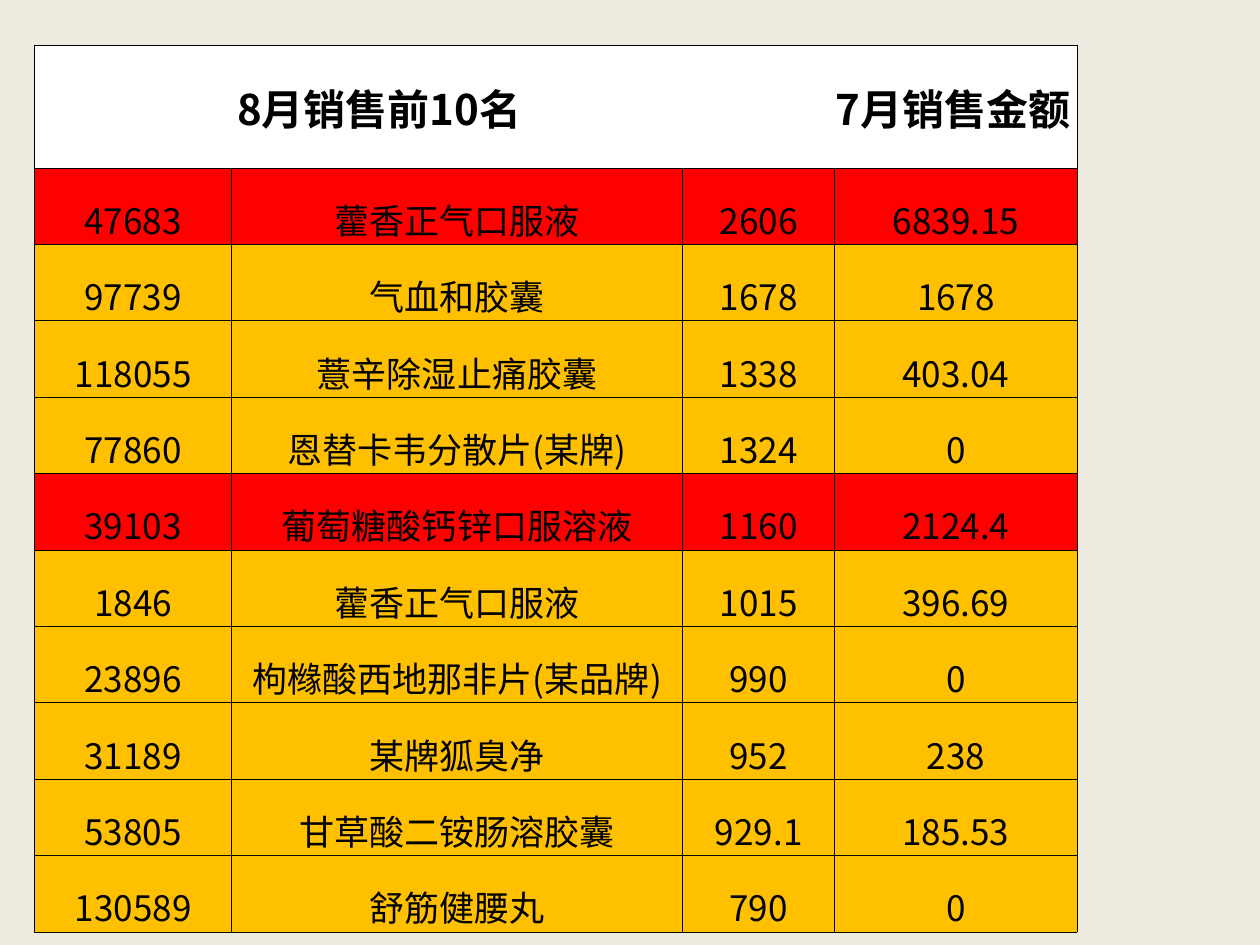
from lxml import etree
from pptx import Presentation
from pptx import util as u
from pptx.dml.color import RGBColor
from pptx.enum import text
from pptx.oxml.ns import qn

FONT = "Noto Sans CJK SC"
BLACK, WHITE, RED, AMBER = "000000", "FFFFFF", "FF0000", "FFC000"
PLAIN_TABLE_STYLE = "{2D5ABB26-0587-4C30-8999-92F81FD0307C}"

COLUMN_WIDTHS = [3.97, 9.09, 3.07, 4.88]
HEADER_HEIGHT, ROW_HEIGHT = 1.6, 1.54
HEADINGS = ["8月销售前10名", "", "", "7月销售金额"]
SALES = [
    ("47683", "藿香正气口服液", "2606", "6839.15"),
    ("97739", "气血和胶囊", "1678", "1678"),
    ("118055", "薏辛除湿止痛胶囊", "1338", "403.04"),
    ("77860", "恩替卡韦分散片(某牌)", "1324", "0"),
    ("39103", "葡萄糖酸钙锌口服溶液", "1160", "2124.4"),
    ("1846", "藿香正气口服液", "1015", "396.69"),
    ("23896", "枸橼酸西地那非片(某品牌)", "990", "0"),
    ("31189", "某牌狐臭净", "952", "238"),
    ("53805", "甘草酸二铵肠溶胶囊", "929.1", "185.53"),
    ("130589", "舒筋健腰丸", "790", "0"),
]
FALLEN_CODES = {"47683", "39103"}


def rgb(value):
    return RGBColor.from_string(value)


def write(frame, words, size=20, bold=False, color=BLACK, align=None, indent=0):
    paragraph = frame.paragraphs[0]
    if align is not None:
        paragraph.alignment = align
    if indent:
        properties = paragraph._p.get_or_add_pPr()
        properties.set("marL", str(u.Cm(indent)))
        properties.set("indent", "0")
    run = paragraph.add_run()
    run.text = words
    run.font.size = u.Pt(size)
    run.font.bold = bold
    run.font.name = FONT
    run.font.color.rgb = rgb(color)
    east_asian = etree.SubElement(run._r.get_or_add_rPr(), qn("a:ea"))
    east_asian.set("typeface", FONT)


class Deck:
    """Holds the slide style and the slide being built."""

    def __init__(self, width, height, background):
        self.presentation = Presentation()
        self.presentation.slide_width = u.Cm(width)
        self.presentation.slide_height = u.Cm(height)
        self.slide = self.presentation.slides.add_slide(
            self.presentation.slide_layouts[6])
        fill = self.slide.background.fill
        fill.solid()
        fill.fore_color.rgb = rgb(background)

    def table(self, left, top, widths, heights):
        table = self.slide.shapes.add_table(
            len(heights), len(widths), u.Cm(left), u.Cm(top),
            u.Cm(sum(widths)), u.Cm(sum(heights))).table
        table.first_row = table.horz_banding = False
        table._tbl.tblPr.find(qn("a:tableStyleId")).text = PLAIN_TABLE_STYLE
        for column, width in zip(table.columns, widths):
            column.width = u.Cm(width)
        for row, height in zip(table.rows, heights):
            row.height = u.Cm(height)
        return table

    def borders(self, cell, sides):
        """Draw the named sides (from L, R, T, B) and hide the others."""
        properties = cell._tc.get_or_add_tcPr()
        for side in "LRTB":
            line = etree.SubElement(properties, qn(f"a:ln{side}"))
            line.set("w", str(u.Pt(0.5)))
            if side in sides:
                fill = etree.SubElement(line, qn("a:solidFill"))
                etree.SubElement(fill, qn("a:srgbClr")).set("val", BLACK)
            else:
                etree.SubElement(line, qn("a:noFill"))

    def cell(self, cell, words, fill, anchor, sides="LRTB", **text_format):
        self.borders(cell, sides)
        cell.fill.solid()
        cell.fill.fore_color.rgb = rgb(fill)
        cell.margin_left = cell.margin_right = cell.margin_top = u.Cm(0.02)
        cell.margin_bottom = 0
        cell.vertical_anchor = anchor
        if words:
            write(cell.text_frame, words, **text_format)


def main():
    deck = Deck(25.4, 19.05, "EEECE1")
    heights = [HEADER_HEIGHT] + [ROW_HEIGHT] * len(SALES)
    table = deck.table(0.7, 0.91, COLUMN_WIDTHS, heights)

    table.cell(0, 0).merge(table.cell(0, 1))
    header_sides = ["LTB", "TB", "TB", "RTB"]
    for column, (heading, sides) in enumerate(zip(HEADINGS, header_sides)):
        deck.cell(table.cell(0, column), heading, WHITE,
                  text.MSO_ANCHOR.MIDDLE, sides, size=24, bold=True,
                  indent=4.06 if column == 0 else 0)

    for row, sale in enumerate(SALES, start=1):
        fill = RED if sale[0] in FALLEN_CODES else AMBER
        for column, value in enumerate(sale):
            deck.cell(table.cell(row, column), value, fill,
                      text.MSO_ANCHOR.BOTTOM, align=text.PP_ALIGN.CENTER)

    deck.presentation.save("out.pptx")


if __name__ == "__main__":
    main()
